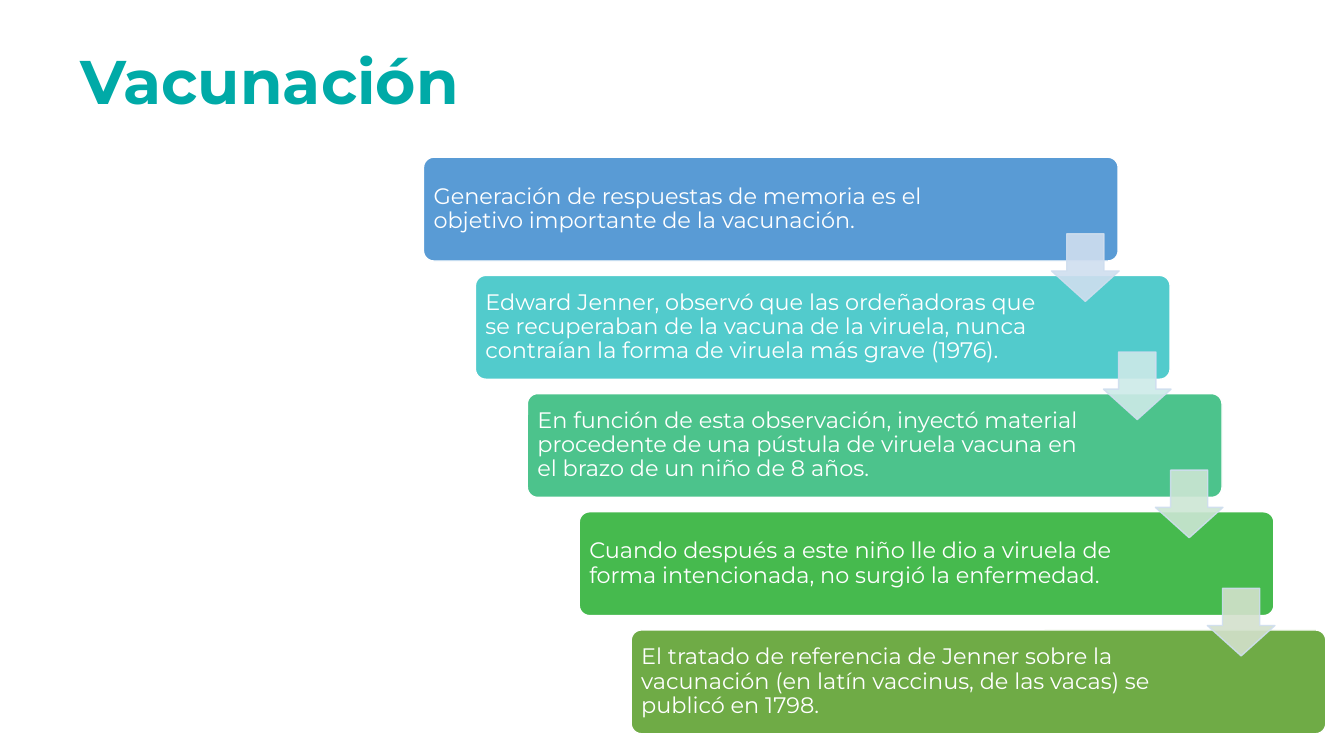
from lxml.etree import SubElement
from pptx import Presentation
from pptx.dml.color import RGBColor
from pptx.enum.shapes import MSO_SHAPE
from pptx.enum.text import MSO_ANCHOR, PP_ALIGN
from pptx.oxml.ns import qn
from pptx.util import Inches, Pt

COLORS = {
    "title": "00AAA7",
    "white": "FFFFFF",
    "arrow_line": "CFDEEF",
    "steps": ["599BD5", "52CBCC", "4CC38C", "46BA4E", "6FAB46"],
    "arrows": ["CFDEEF", "CDEAE8", "CCE6D4", "D3E1CC"],
}
STEPS = [
    "Generación de respuestas de memoria es el objetivo importante de la vacunación.",
    "Edward Jenner, observó que las ordeñadoras que se recuperaban de la vacuna de la viruela, "
    "nunca contraían la forma de viruela más grave (1976).",
    "En función de esta observación, inyectó material procedente de una pústula de viruela vacuna "
    "en el brazo de un niño de 8 años.",
    "Cuando después a este niño lle dio a viruela de forma intencionada, no surgió la enfermedad.",
    "El tratado de referencia de Jenner sobre la vacunación (en latín vaccinus, de las vacas) "
    "se publicó en 1798.",
]
STEP_LEFT, STEP_TOP = 4.2, 1.56
STEP_WIDTH, STEP_HEIGHT = 6.89, 1.03
SHIFT_X = (6.26 - STEP_LEFT) / 4
SHIFT_Y = (6.25 - STEP_TOP) / 4
ARROW_LEFT, ARROW_TOP, ARROW_SIZE = 10.43, 2.32, 0.67


class SlideBuilder:
    """Hold the slide and its shared style."""

    font_name = "Montserrat"

    def __init__(self, slide):
        """Keep the slide being built."""
        self.slide = slide

    def set_text(self, shape, text, size, color, bold=False):
        """Put left-aligned, vertically centred text in a shape."""
        frame = shape.text_frame
        frame.text = text
        frame.word_wrap = True
        frame.vertical_anchor = MSO_ANCHOR.MIDDLE
        paragraph = frame.paragraphs[0]
        paragraph.alignment = PP_ALIGN.LEFT
        paragraph.line_spacing = 0.9
        font = paragraph.runs[0].font
        font.name = self.font_name
        font.size = Pt(size)
        font.bold = bold
        font.color.rgb = RGBColor.from_string(color)

    def add_title(self, text):
        """Place and fill the title placeholder."""
        title = self.slide.shapes.title
        title.left, title.top = Inches(0.7), Inches(0.11)
        title.width, title.height = Inches(11.5), Inches(1.45)
        self.set_text(title, text, 44, COLORS["title"], bold=True)

    def add_preset(self, kind, left, top, width, height, adjustments, fill, line):
        """Add a filled and outlined preset shape."""
        shape = self.slide.shapes.add_shape(
            kind, Inches(left), Inches(top), Inches(width), Inches(height))
        for index, value in enumerate(adjustments):
            shape.adjustments[index] = value
        shape.shadow.inherit = False
        shape.fill.solid()
        shape.fill.fore_color.rgb = RGBColor.from_string(fill)
        shape.line.color.rgb = RGBColor.from_string(line)
        shape.line.width = Pt(1)
        return shape

    def add_step(self, index, text, fill):
        """Add one step of the descending staircase."""
        step = self.add_preset(
            MSO_SHAPE.ROUNDED_RECTANGLE, STEP_LEFT + index * SHIFT_X, STEP_TOP + index * SHIFT_Y,
            STEP_WIDTH, STEP_HEIGHT, [0.1], fill, COLORS["white"])
        frame = step.text_frame
        frame.margin_left = frame.margin_top = frame.margin_bottom = Inches(0.07)
        frame.margin_right = Inches(1.25)
        self.set_text(step, text, 16, COLORS["white"])

    def add_arrow(self, index, fill):
        """Add a translucent arrow from one step to the next."""
        arrow = self.add_preset(
            MSO_SHAPE.DOWN_ARROW, ARROW_LEFT + index * SHIFT_X, ARROW_TOP + index * SHIFT_Y,
            ARROW_SIZE, ARROW_SIZE, [0.55, 0.45], fill, COLORS["arrow_line"])
        for color in arrow.element.spPr.iter(qn("a:srgbClr")):
            SubElement(color, qn("a:alpha"), val="90000")


def main():
    """Build and save the presentation."""
    presentation = Presentation()
    presentation.slide_width = Inches(13.33)
    presentation.slide_height = Inches(7.5)
    builder = SlideBuilder(presentation.slides.add_slide(presentation.slide_layouts[5]))
    builder.add_title("Vacunación")
    for index, (text, fill) in enumerate(zip(STEPS, COLORS["steps"])):
        builder.add_step(index, text, fill)
    for index, fill in enumerate(COLORS["arrows"]):
        builder.add_arrow(index, fill)
    presentation.save("out.pptx")


if __name__ == "__main__":
    main()
